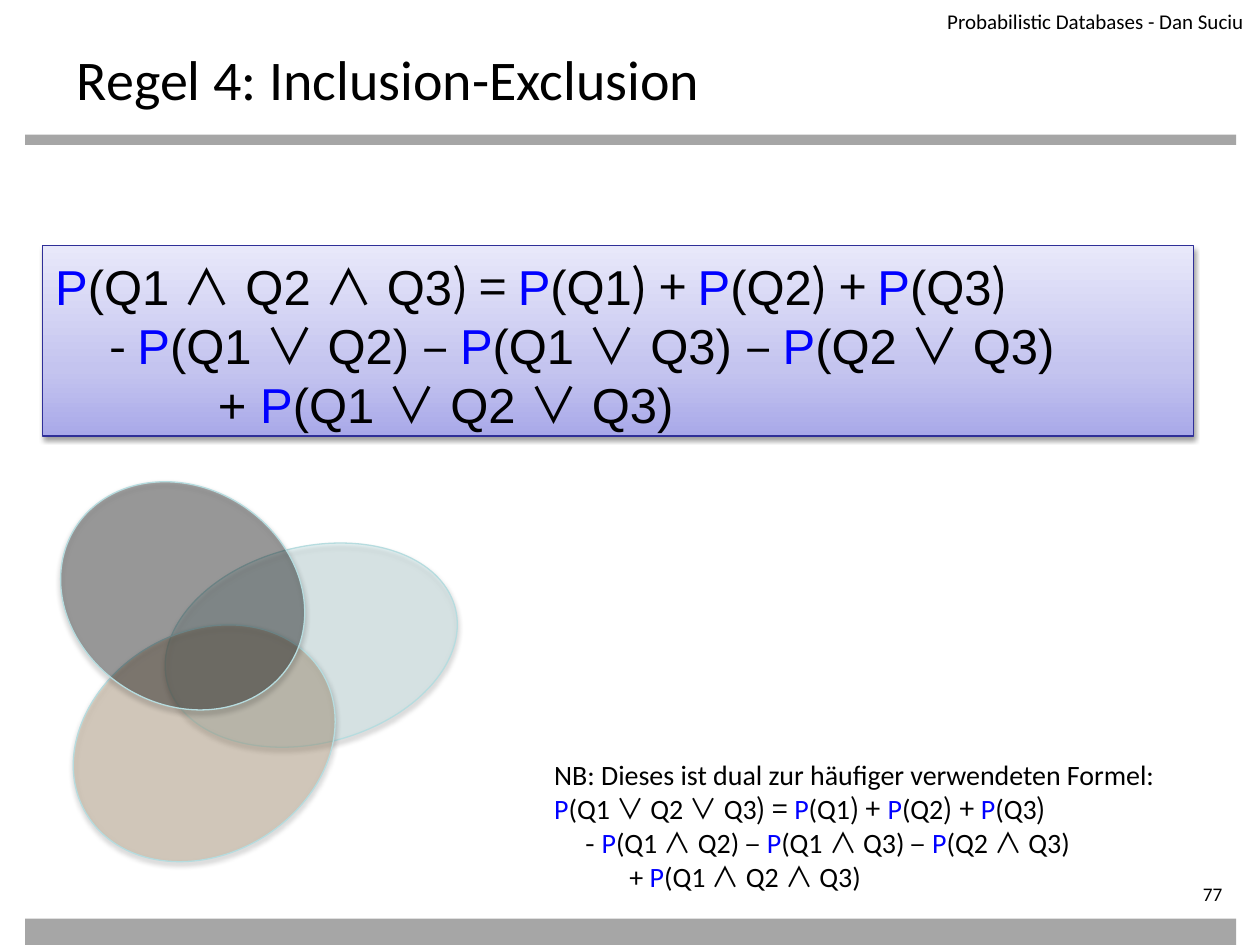
import copy

import pptx
import pptx.dml.color
import pptx.enum.shapes
import pptx.enum.text
import pptx.oxml
import pptx.oxml.ns
import pptx.util

Pt = pptx.util.Pt
RGB = pptx.dml.color.RGBColor
Shape = pptx.enum.shapes.MSO_SHAPE
Align = pptx.enum.text.PP_ALIGN
qn = pptx.oxml.ns.qn

BLACK = RGB(0x00, 0x00, 0x00)
BLUE = RGB(0x00, 0x00, 0xFF)
GREY = RGB(0xA6, 0xA6, 0xA6)
NAVY = RGB(0x2F, 0x2F, 0x98)
LAVENDER = [(0, RGB(0xA9, 0xA9, 0xE9)), (0.35, RGB(0xC4, 0xC4, 0xEF)), (1, RGB(0xE8, 0xE8, 0xFA))]
AQUA = RGB(0xBB, 0xE0, 0xE3)
TAN = RGB(0xAD, 0x8F, 0x67)
RIM = RGB(0xB6, 0xDC, 0xDF)

BODY_FONT = "Calibri"
FORMULA_FONT = "Arial"
SYMBOL_FONT = "Noto Sans CJK JP"


def add_xml(parent, tag, **attributes):
    child = parent.makeelement(qn(tag), attributes)
    parent.append(child)
    return child


def inclusion_exclusion(outer, inner):
    """Three lines of the formula; ~ switches to the symbol font and back."""
    return [
        f"P(Q1 {outer}Q2 {outer}Q3~) = ~P(Q1~) + ~P(Q2~) + ~P(Q3~)",
        f"~- ~P(Q1 {inner}Q2) ~– ~P(Q1 {inner}Q3) ~– ~P(Q2 {inner}Q3)",
        f"+ P(Q1 {inner}Q2 {inner}Q3)",
    ]


class SlideBuilder:
    def __init__(self, deck):
        self.page = deck.slides.add_slide(deck.slide_layouts[5])

    def shape(self, kind, left, top, width, height):
        shape = self.page.shapes.add_shape(kind, Pt(left), Pt(top), Pt(width), Pt(height))
        shape.shadow.inherit = False
        return shape

    def outline(self, shape, color):
        shape.line.color.rgb = color
        shape.line.width = Pt(0.75)

    def drop_shadow(self, shape, distance, opacity):
        effects = shape._element.spPr.find(qn("a:effectLst"))
        shadow = add_xml(effects, "a:outerShdw", blurRad=str(Pt(3.1)),
                         dist=str(Pt(distance)), dir="5400000", rotWithShape="0")
        color = add_xml(shadow, "a:srgbClr", val=str(BLACK))
        add_xml(color, "a:alpha", val=str(opacity * 1000))

    def bar(self, top, height):
        bar = self.shape(Shape.RECTANGLE, 14.4, top, 692, height)
        bar.fill.solid()
        bar.fill.fore_color.rgb = GREY
        bar.line.fill.background()

    def ellipse(self, left, top, width, height, angle, color):
        ellipse = self.shape(Shape.OVAL, left, top, width, height)
        ellipse.rotation = angle
        ellipse.fill.solid()
        ellipse.fill.fore_color.rgb = color
        tint = ellipse._element.spPr.find(qn("a:solidFill")).find(qn("a:srgbClr"))
        add_xml(tint, "a:alpha", val="33000")
        self.outline(ellipse, RIM)
        self.drop_shadow(ellipse, 1.8, 35)

    def gradient_panel(self, left, top, width, height):
        panel = self.shape(Shape.RECTANGLE, left, top, width, height)
        panel.fill.gradient()
        panel.fill.gradient_angle = 90
        stop_list = next(panel._element.spPr.iter(qn("a:gsLst")))
        stop_list.insert(1, copy.deepcopy(stop_list[0]))
        for stop, (position, color) in zip(panel.fill.gradient_stops, LAVENDER):
            stop.position = position
            stop.color.rgb = color
        self.outline(panel, NAVY)
        self.drop_shadow(panel, 1.6, 38)
        return panel

    def style(self, span, size, font, color=BLACK):
        span.font.size = Pt(size)
        span.font.color.rgb = color
        span.font.name = font
        if font == SYMBOL_FONT:
            add_xml(span.font._element, "a:ea", typeface=font)

    def formula(self, box, lines, indents, size, font, pitch):
        frame = box.text_frame
        frame.word_wrap = True
        frame.vertical_anchor = pptx.enum.text.MSO_ANCHOR.TOP
        for index, (line, indent) in enumerate(zip(lines, indents)):
            para = frame.add_paragraph() if index else frame.paragraphs[0]
            para.alignment = Align.LEFT
            para.line_spacing = Pt(pitch)
            para._p.get_or_add_pPr().set("marL", str(Pt(indent)))
            for order, part in enumerate(line.split("~")):
                for piece in filter(None, part.replace("P", "|P|").split("|")):
                    span = para.add_run()
                    span.text = piece
                    self.style(span, size, SYMBOL_FONT if order % 2 else font,
                               BLUE if piece == "P" else BLACK)

    def text_box(self, left, top, width, height):
        return self.page.shapes.add_textbox(Pt(left), Pt(top), Pt(width), Pt(height))

    def line_of_text(self, box, text, size, alignment):
        frame = box.text_frame
        frame.word_wrap = True
        frame.text = text
        para = frame.paragraphs[0]
        para.alignment = alignment
        self.style(para.runs[0], size, BODY_FONT)

    def title(self, text):
        box = self.page.shapes.title
        box.left, box.top, box.width, box.height = Pt(36.7), Pt(20.2), Pt(648), Pt(39.6)
        self.line_of_text(box, text, 32, Align.LEFT)
        frame = box.text_frame
        frame.auto_size = pptx.enum.text.MSO_AUTO_SIZE.NONE
        frame.vertical_anchor = pptx.enum.text.MSO_ANCHOR.TOP
        frame.margin_top = Pt(5)


def main():
    deck = pptx.Presentation()
    deck.slide_width, deck.slide_height = Pt(720), Pt(540)
    slide = SlideBuilder(deck)

    # Frame bars and title
    slide.bar(77, 5.8)
    slide.bar(524.9, 15.1)
    slide.title("Regel 4: Inclusion-Exclusion")

    # Main formula
    panel = slide.gradient_panel(24.5, 140.4, 657.4, 108.7)
    panel.text_frame.margin_top = Pt(6)
    panel.text_frame.margin_bottom = Pt(1.2)
    slide.formula(panel, inclusion_exclusion("~∧~ ", "~∨~ "), (0, 31, 93), 28, FORMULA_FONT, 33.8)

    # Page number
    number = slide.text_box(626.4, 504, 79.2, 15.8)
    number.text_frame.margin_top = number.text_frame.margin_bottom = 0
    slide.line_of_text(number, "77", 11, Align.RIGHT)

    # Venn diagram
    slide.ellipse(92.9, 312.5, 169.9, 112.3, 345.6, AQUA)
    slide.ellipse(38.2, 361.4, 157, 126.7, 329.2, TAN)
    slide.ellipse(31.7, 278.6, 145.4, 123.8, 32.5, BLACK)

    # Dual formula
    note = slide.text_box(309.6, 429.1, 367.2, 85)
    lines = ["NB: Dieses ist dual zur häufiger verwendeten Formel:"]
    lines += inclusion_exclusion("~∨ ~", "~∧ ~")
    slide.formula(note, lines, (0, 0, 18, 43), 16, BODY_FONT, 19.4)

    # Header
    header = slide.text_box(393.8, 1.4, 324, 25.9)
    slide.line_of_text(header, "Probabilistic Databases - Dan Suciu", 12, Align.RIGHT)

    deck.save("out.pptx")


if __name__ == "__main__":
    main()
